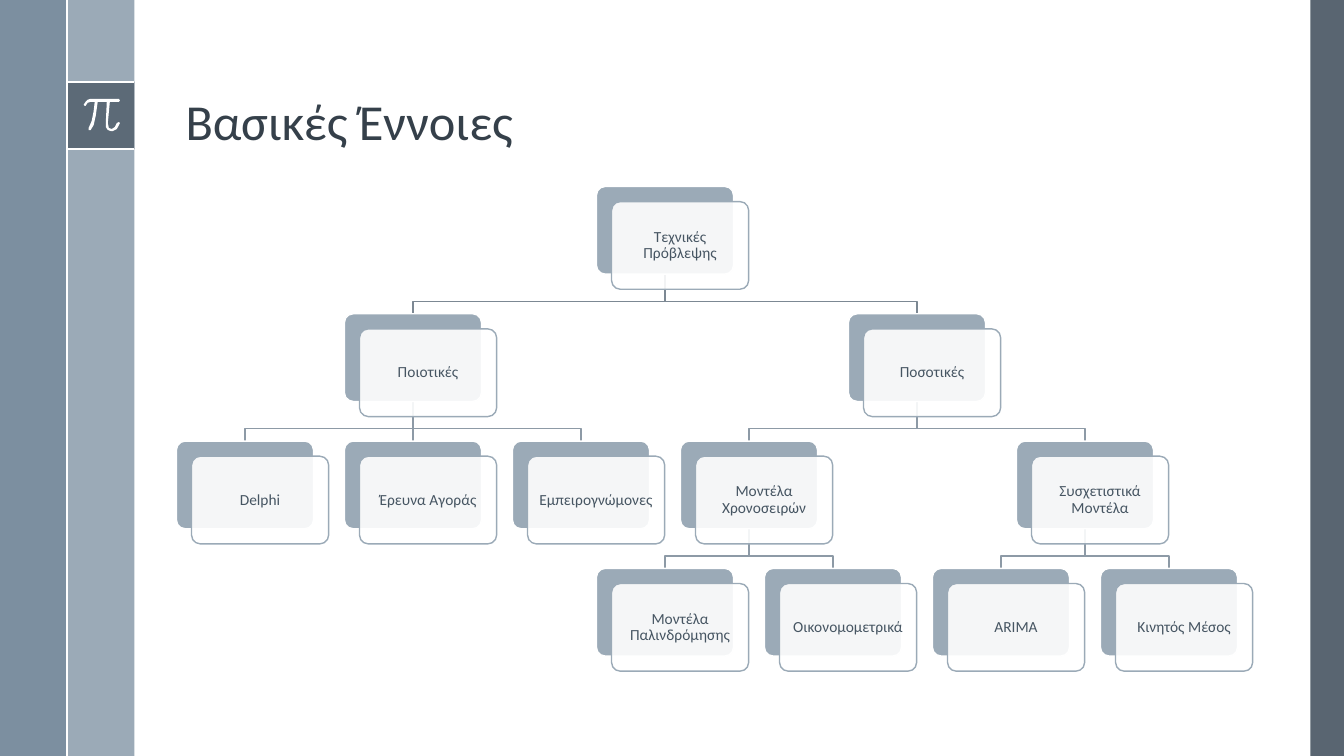
from lxml import etree
from pptx import Presentation
from pptx.dml.color import RGBColor
from pptx.enum.shapes import MSO_CONNECTOR, MSO_SHAPE
from pptx.enum.text import MSO_ANCHOR, MSO_AUTO_SIZE, PP_ALIGN
from pptx.oxml.ns import qn
from pptx.util import Inches, Pt

RECT, ROUNDED = MSO_SHAPE.RECTANGLE, MSO_SHAPE.ROUNDED_RECTANGLE
STRAIGHT = MSO_CONNECTOR.STRAIGHT
LEFT, CENTER = PP_ALIGN.LEFT, PP_ALIGN.CENTER
MIDDLE, BOTTOM = MSO_ANCHOR.MIDDLE, MSO_ANCHOR.BOTTOM

TITLE = "Βασικές Έννοιες"
NODES = [
    ("Τεχνικές Πρόβλεψης", 2.5, 0, None),
    ("Ποιοτικές", 1, 1, 0),
    ("Ποσοτικές", 4, 1, 0),
    ("Delphi", 0, 2, 1),
    ("Έρευνα Αγοράς", 1, 2, 1),
    ("Εμπειρογνώμονες", 2, 2, 1),
    ("Μοντέλα Χρονοσειρών", 3, 2, 2),
    ("Συσχετιστικά Μοντέλα", 5, 2, 2),
    ("Μοντέλα Παλινδρόμησης", 2.5, 3, 6),
    ("Οικονομομετρικά", 3.5, 3, 6),
    ("ARIMA", 4.5, 3, 7),
    ("Κινητός Μέσος", 5.5, 3, 7),
]
COLORS = {
    "white": "FFFFFF", "dark": "475562", "steel": "6A8093", "mist": "9BAAB7",
    "title": "35404A", "label": "465562", "link": "8D9AA6", "root_link": "7C8893",
}
WIDTH, HEIGHT = 13.33, 7.5
BAND = WIDTH / 20
BADGE_TOP = 0.81
PANELS = [
    (WIDTH - BAND / 2, 0, BAND / 2, HEIGHT, "dark", 90),
    (BAND, 0, BAND, HEIGHT, "mist", 100),
    (0, 0, BAND, HEIGHT, "steel", 88),
    (BAND, BADGE_TOP, BAND, BAND, "dark", 75),
]
RULES = [
    (BAND, BADGE_TOP, 2 * BAND, BADGE_TOP),
    (BAND, BADGE_TOP + BAND, 2 * BAND, BADGE_TOP + BAND),
    (BAND, 0, BAND, HEIGHT),
]
PI_OUTLINE = [
    (1.18, 0.98), (0.9, 0.98), (0.87, 0.99), (0.85, 1.01), (0.83, 1.04),
    (0.84, 1.05), (0.85, 1.05), (0.87, 1.02), (0.9, 1.01), (0.94, 1.01),
    (0.93, 1.1), (0.91, 1.2), (0.88, 1.27), (0.88, 1.29), (0.9, 1.29),
    (0.93, 1.24), (0.95, 1.15), (0.97, 1.01), (1.06, 1.01), (1.05, 1.22),
    (1.05, 1.26), (1.07, 1.29), (1.1, 1.3), (1.12, 1.3), (1.16, 1.28),
    (1.19, 1.22), (1.18, 1.21), (1.16, 1.22), (1.14, 1.26), (1.11, 1.28),
    (1.08, 1.27), (1.07, 1.22), (1.09, 1.01), (1.18, 1.01), (1.19, 1),
]
GRID_LEFT, GRID_TOP = 1.75, 1.85
COLUMN, ROW = WIDTH / 8, 1.263
CARD_W, CARD_H, OFFSET = 1.36, 0.87, 0.15
BEND = 0.27


def color(name):
    return RGBColor.from_string(COLORS[name])


def paint(shape, fill=None, opacity=100, line=None, weight=1):
    shape.shadow.inherit = False
    if fill:
        shape.fill.solid()
        shape.fill.fore_color.rgb = color(fill)
        if opacity < 100:
            tint = shape.fill._xPr.find(f"{qn('a:solidFill')}/{qn('a:srgbClr')}")
            etree.SubElement(tint, qn("a:alpha"), val=str(opacity * 1000))
    else:
        shape.fill.background()
    if line:
        shape.line.color.rgb = color(line)
        shape.line.width = Pt(weight)
    else:
        shape.line.fill.background()


def add_block(page, kind, left, top, width, height, **look):
    block = page.shapes.add_shape(kind, *map(Inches, (left, top, width, height)))
    paint(block, **look)
    return block


def add_rule(page, ends, line, weight):
    rule = page.shapes.add_connector(STRAIGHT, *map(Inches, ends))
    rule.line.color.rgb = color(line)
    rule.line.width = Pt(weight)
    etree.SubElement(rule._element.spPr, qn("a:effectLst"))


def add_outline(page, points, close, **look):
    corners = [(Inches(x), Inches(y)) for x, y in points]
    builder = page.shapes.build_freeform(*corners[0])
    builder.add_line_segments(corners[1:], close=close)
    paint(builder.convert_to_shape(), **look)


def write(box, text, size, tone, align, anchor, margins):
    frame = box.text_frame
    layout = {"word_wrap": True, "auto_size": MSO_AUTO_SIZE.NONE, "vertical_anchor": anchor}
    layout.update(zip(("margin_left", "margin_top", "margin_right", "margin_bottom"), margins))
    for name, value in layout.items():
        setattr(frame, name, value)
    para = frame.paragraphs[0]
    para.alignment, para.line_spacing = align, 0.9
    span = para.add_run()
    span.text = text
    for name, value in {"name": "Calibri", "size": Pt(size)}.items():
        setattr(span.font, name, value)
    span.font.color.rgb = color(tone)


def corner(node):
    _, slot, level, _ = node
    return GRID_LEFT + slot * COLUMN, GRID_TOP + level * ROW


def add_link(page, parent, child):
    start_x, start_y = corner(parent)
    end_x, end_y = corner(child)
    start_x, end_x = start_x + CARD_W / 2, end_x + CARD_W / 2
    start_y += CARD_H
    tone = "root_link" if parent[2] == 0 else "link"
    if parent[1] == child[1]:
        add_rule(page, (start_x, start_y, end_x, end_y), tone, 1)
    else:
        bend_y = start_y + BEND
        points = [(start_x, start_y), (start_x, bend_y), (end_x, bend_y), (end_x, end_y)]
        add_outline(page, points, False, line=tone)


def add_card(page, node):
    left, top = corner(node)
    back = add_block(page, ROUNDED, left, top, CARD_W, CARD_H, fill="mist", line="white")
    front = add_block(page, ROUNDED, left + OFFSET, top + OFFSET, CARD_W, CARD_H,
                      fill="white", opacity=90, line="mist")
    for card in (back, front):
        card.adjustments[0] = 0.1
    write(front, node[0], 11, "label", CENTER, MIDDLE, [Inches(0.05)] * 4)


def main():
    deck = Presentation()
    deck.slide_width, deck.slide_height = Inches(WIDTH), Inches(HEIGHT)
    page = deck.slides.add_slide(deck.slide_layouts[5])
    for left, top, width, height, fill, opacity in PANELS:
        add_block(page, RECT, left, top, width, height, fill=fill, opacity=opacity)
    for ends in RULES:
        add_rule(page, ends, "white", 1.5)
    add_outline(page, PI_OUTLINE, True, fill="white")

    title = page.shapes.title
    place = {"left": 1.74, "top": 0.19, "width": 10.7, "height": 1.36}
    for name, value in place.items():
        setattr(title, name, Inches(value))
    write(title, TITLE, 36, "title", LEFT, BOTTOM, map(Inches, (0.1, 0.05, 0.1, 0.05)))

    for node in NODES:
        if node[3] is not None:
            add_link(page, NODES[node[3]], node)
    for node in NODES:
        add_card(page, node)
    deck.save("out.pptx")


if __name__ == "__main__":
    main()
